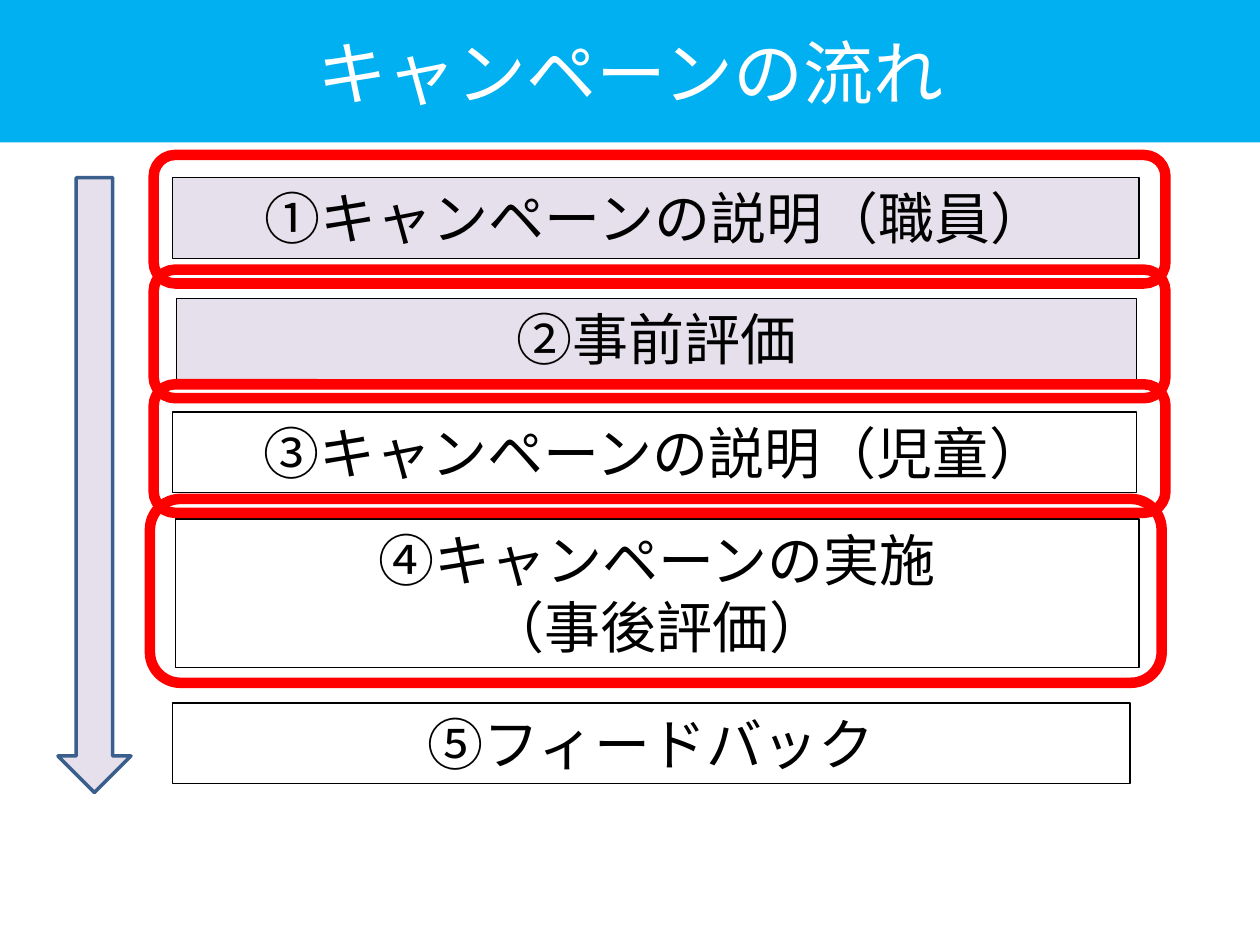
from dataclasses import dataclass

from pptx import Presentation
from pptx.dml.color import RGBColor
from pptx.enum.shapes import MSO_SHAPE
from pptx.enum.text import MSO_ANCHOR, MSO_AUTO_SIZE, PP_ALIGN
from pptx.util import Inches, Pt

WHITE = RGBColor(0xFF, 0xFF, 0xFF)
BLACK = RGBColor(0x00, 0x00, 0x00)
SKY = RGBColor(0x00, 0xB0, 0xF0)
LAVENDER = RGBColor(0xE6, 0xE0, 0xEC)
NAVY = RGBColor(0x3A, 0x5F, 0x8C)
RED = RGBColor(0xFF, 0x00, 0x00)

FONT = "Arial"
CELL = Inches(0.1)  # the slide is a grid of 100 columns and 75 rows
COLUMNS, ROWS = 100, 75


@dataclass(frozen=True)
class Box:
    """A place on the grid, in columns and rows."""
    left: float
    top: float
    width: float
    height: float

    def lengths(self) -> list[int]:
        return [round(value * CELL) for value in
                (self.left, self.top, self.width, self.height)]


@dataclass(frozen=True)
class Step:
    lines: tuple[str, ...]
    box: Box
    fill: RGBColor | None = None


LINE_HEIGHT = 6.4
FRAME_PITCH = 9.1
FRAME_TOP = 12.3

STEPS = (
    Step(("①キャンペーンの説明（職員）",), Box(13.7, 14.1, 76.7, LINE_HEIGHT), LAVENDER),
    Step(("②事前評価",), Box(14, 23.7, 76.2, LINE_HEIGHT), LAVENDER),
    Step(("③キャンペーンの説明（児童）",), Box(13.7, 32.7, 76.5, LINE_HEIGHT), WHITE),
    Step(("④キャンペーンの実施", "（事後評価）"), Box(13.9, 41.2, 76.5, 11.8), WHITE),
    Step(("⑤フィードバック",), Box(13.7, 55.8, 76, LINE_HEIGHT)),
)
FRAMES = (
    *(Box(12.2, FRAME_TOP + FRAME_PITCH * row, 80.3, 10.2) for row in range(3)),
    Box(11.9, FRAME_TOP + FRAME_PITCH * 3, 80.3, 14.6),
)


def paint(shape, fill: RGBColor | None, line: RGBColor, line_width: float) -> None:
    if fill is None:
        shape.fill.background()
    else:
        shape.fill.solid()
        shape.fill.fore_color.rgb = fill
    shape.line.color.rgb = line
    shape.line.width = Pt(line_width)


def write_lines(text_frame, lines: tuple[str, ...], size: int, color: RGBColor) -> None:
    for index, line in enumerate(lines):
        paragraph = text_frame.add_paragraph() if index else text_frame.paragraphs[0]
        paragraph.alignment = PP_ALIGN.CENTER
        run = paragraph.add_run()
        run.text = line
        run.font.name = FONT
        run.font.size = Pt(size)
        run.font.color.rgb = color


def format_title(title, text: str) -> None:
    title.left, title.top, title.width, title.height = Box(0, 0, COLUMNS, 11.3).lengths()
    title.fill.solid()
    title.fill.fore_color.rgb = SKY
    title.text_frame.auto_size = MSO_AUTO_SIZE.NONE
    title.text_frame.vertical_anchor = MSO_ANCHOR.MIDDLE
    write_lines(title.text_frame, (text,), 40, WHITE)


def add_outline(slide, preset: MSO_SHAPE, box: Box, fill: RGBColor | None,
                line: RGBColor, line_width: float) -> None:
    shape = slide.shapes.add_shape(preset, *box.lengths())
    shape.shadow.inherit = False
    paint(shape, fill, line, line_width)


def add_step(slide, step: Step) -> None:
    shape = slide.shapes.add_textbox(*step.box.lengths())
    paint(shape, step.fill, BLACK, 0.75)
    shape.text_frame.word_wrap = True
    shape.text_frame.auto_size = MSO_AUTO_SIZE.SHAPE_TO_FIT_TEXT
    write_lines(shape.text_frame, step.lines, 32, BLACK)


def main() -> None:
    presentation = Presentation()
    presentation.slide_width = COLUMNS * CELL
    presentation.slide_height = ROWS * CELL
    slide = presentation.slides.add_slide(presentation.slide_layouts.get_by_name("Title Only"))

    format_title(slide.shapes.title, "キャンペーンの流れ")
    add_outline(slide, MSO_SHAPE.DOWN_ARROW, Box(4.6, 14.1, 5.8, 48.8), LAVENDER, NAVY, 2)
    for step in STEPS:
        add_step(slide, step)
    for frame in FRAMES:
        add_outline(slide, MSO_SHAPE.ROUNDED_RECTANGLE, frame, None, RED, 6)

    presentation.save("out.pptx")


if __name__ == "__main__":
    main()
